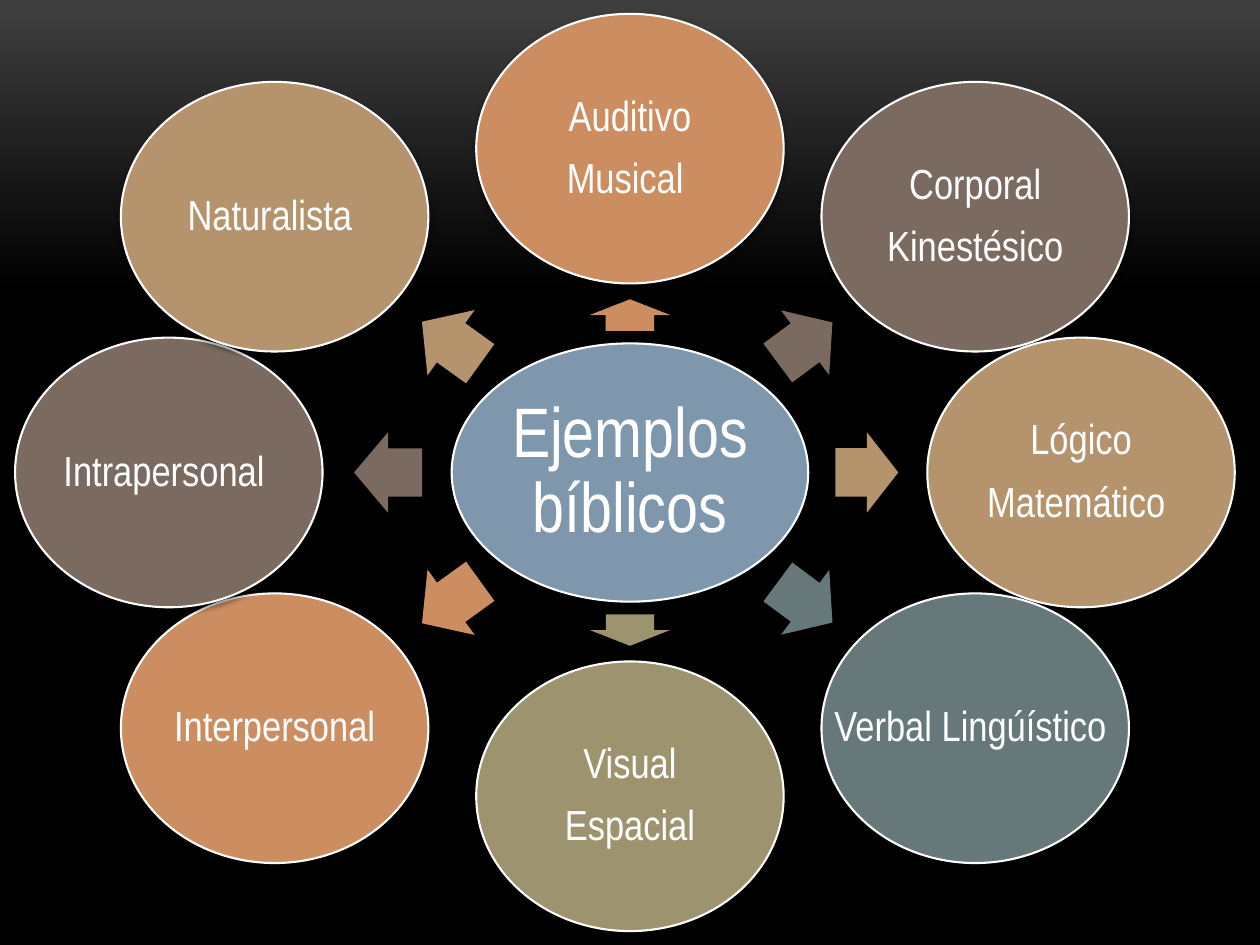
from lxml import etree
from pptx import Presentation
from pptx.dml.color import RGBColor
from pptx.enum.shapes import MSO_SHAPE
from pptx.enum.text import MSO_ANCHOR, PP_ALIGN
from pptx.oxml.ns import qn
from pptx.util import Inches, Pt

OVAL, ARROW = MSO_SHAPE.OVAL, MSO_SHAPE.RIGHT_ARROW
MIDDLE, CENTER = MSO_ANCHOR.MIDDLE, PP_ALIGN.CENTER

WHITE = RGBColor(0xFF, 0xFF, 0xFF)
BLACK = RGBColor(0x00, 0x00, 0x00)
CHARCOAL = RGBColor(0x3F, 0x3F, 0x3F)
BLUE = RGBColor(0x7E, 0x97, 0xAD)
ORANGE = RGBColor(0xCC, 0x8E, 0x60)
BROWN = RGBColor(0x7A, 0x6A, 0x60)
TAN = RGBColor(0xB4, 0x93, 0x6D)
TEAL = RGBColor(0x67, 0x78, 0x7B)
OLIVE = RGBColor(0x9D, 0x93, 0x6F)

MIDDLE_Y = 3.75
FONT = "Arial Narrow"

presentation = Presentation()
presentation.slide_width, presentation.slide_height = Inches(10), Inches(7.5)
slide = presentation.slides.add_slide(presentation.slide_layouts[6])

# Background: charcoal fading to black in the upper third
background = slide.background.fill
background.gradient()
background.gradient_angle = 270
for stop, color, position in zip(background.gradient_stops, (CHARCOAL, BLACK), (0, 0.31)):
    stop.color.rgb = color
    stop.position = position


def add_centered(kind, center_x, center_y, width, height, color):
    """Add a filled shape with a soft shadow around a center point."""
    shape = slide.shapes.add_shape(
        kind, Inches(center_x - width / 2), Inches(center_y - height / 2),
        Inches(width), Inches(height))
    shape.fill.solid()
    shape.fill.fore_color.rgb = color
    shape.shadow.inherit = False
    effects = shape._element.spPr.find(qn("a:effectLst"))
    shadow = etree.SubElement(
        effects, qn("a:outerShdw"), blurRad=str(Pt(3)), dist=str(Pt(2)),
        dir="5400000", rotWithShape="0")
    shadow_color = etree.SubElement(shadow, qn("a:srgbClr"), val="000000")
    etree.SubElement(shadow_color, qn("a:alpha"), val="40000")
    return shape


def add_bubble(center_x, center_y, width, height, color, lines, size, wrap):
    """Add a white-outlined ellipse with centered lines of text."""
    bubble = add_centered(OVAL, center_x, center_y, width, height, color)
    bubble.line.color.rgb = WHITE
    bubble.line.width = Pt(1.2)
    frame = bubble.text_frame
    frame.word_wrap = wrap
    frame.vertical_anchor = MIDDLE
    frame.margin_left = frame.margin_right = 0
    frame.margin_top = frame.margin_bottom = Inches(0.03)
    frame.text = "\n".join(lines)
    for paragraph in frame.paragraphs:
        paragraph.alignment = CENTER
        paragraph.line_spacing = 0.9
        paragraph.space_after = Pt(size * 0.4)
        paragraph.font.name = FONT
        paragraph.font.size = Pt(size)
        paragraph.font.color.rgb = WHITE


# Hub
add_bubble(5, MIDDLE_Y, 2.83, 2.05, BLUE, ["Ejemplos bíblicos"], 40, True)

# Intelligences, clockwise from the top: lines, color, bubble x and y offset,
# arrow x and y offset, arrow length, arrow rotation
intelligences = [
    (["Auditivo", "Musical "], ORANGE, 5, -2.57, 5, -1.25, 0.25, 270),
    (["Corporal", "Kinestésico"], BROWN, 7.74, -2.03, 6.39, -1.03, 0.54, 323.4),
    (["Lógico", "Matemático "], TAN, 8.58, 0, 6.88, 0, 0.5, 0),
    (["Verbal Lingúístico "], TEAL, 7.74, 2.03, 6.39, 1.03, 0.54, 36.6),
    (["Visual", "Espacial"], OLIVE, 5, 2.57, 5, 1.25, 0.25, 90),
    (["Interpersonal"], ORANGE, 2.18, 2.03, 3.58, 1.03, 0.57, 144.2),
    (["Intrapersonal "], BROWN, 1.34, 0, 3.08, 0, 0.54, 180),
    (["Naturalista "], TAN, 2.18, -2.03, 3.58, -1.03, 0.57, 215.8),
]
for lines, color, bubble_x, bubble_dy, arrow_x, arrow_dy, length, rotation in intelligences:
    arrow = add_centered(ARROW, arrow_x, MIDDLE_Y + arrow_dy, length, 0.64, color)
    arrow.line.fill.background()
    arrow.adjustments[0] = 0.6
    arrow.adjustments[1] = 0.5
    arrow.rotation = rotation
    add_bubble(bubble_x, MIDDLE_Y + bubble_dy, 2.44, 2.14, color, lines, 24, False)

presentation.save("out.pptx")
